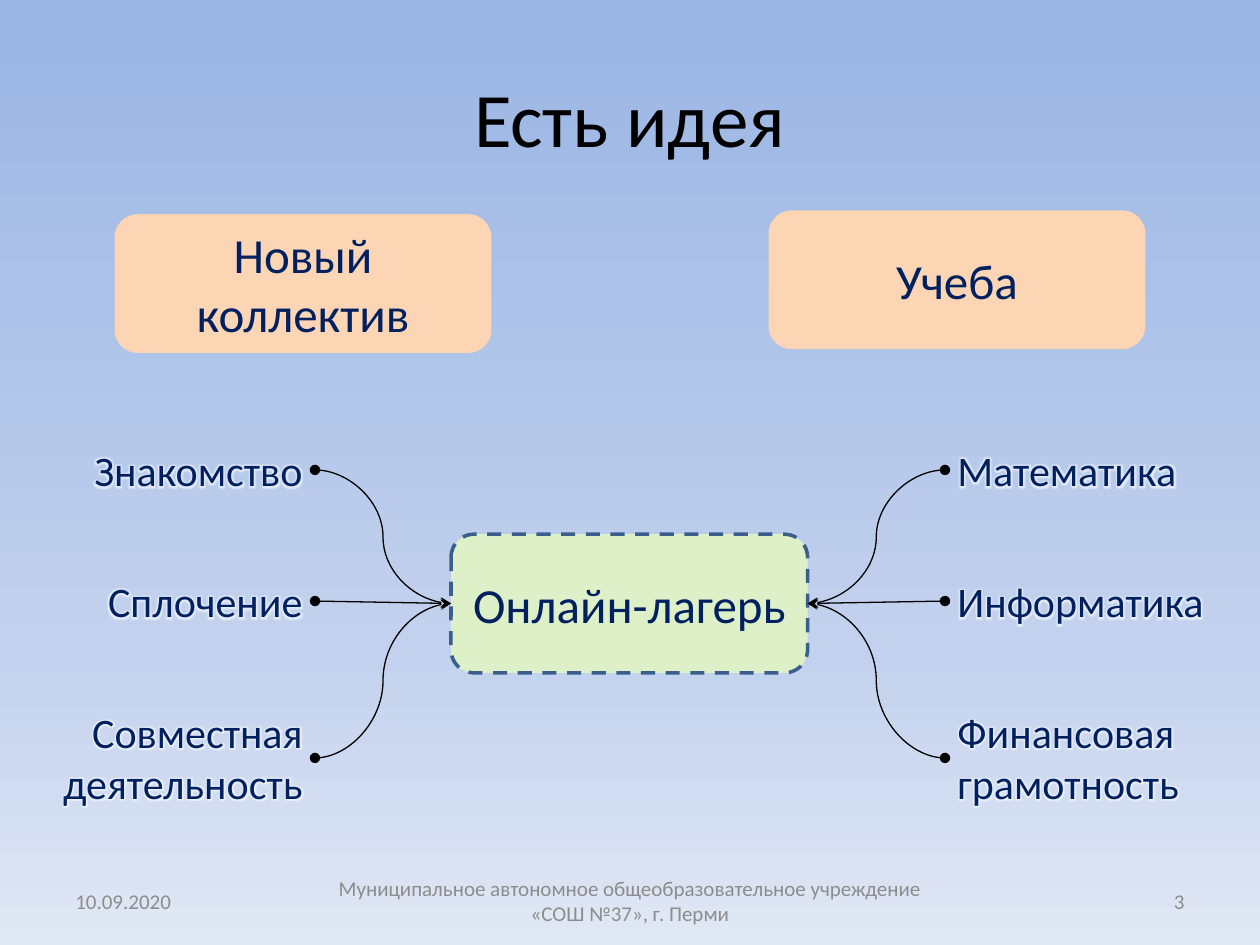
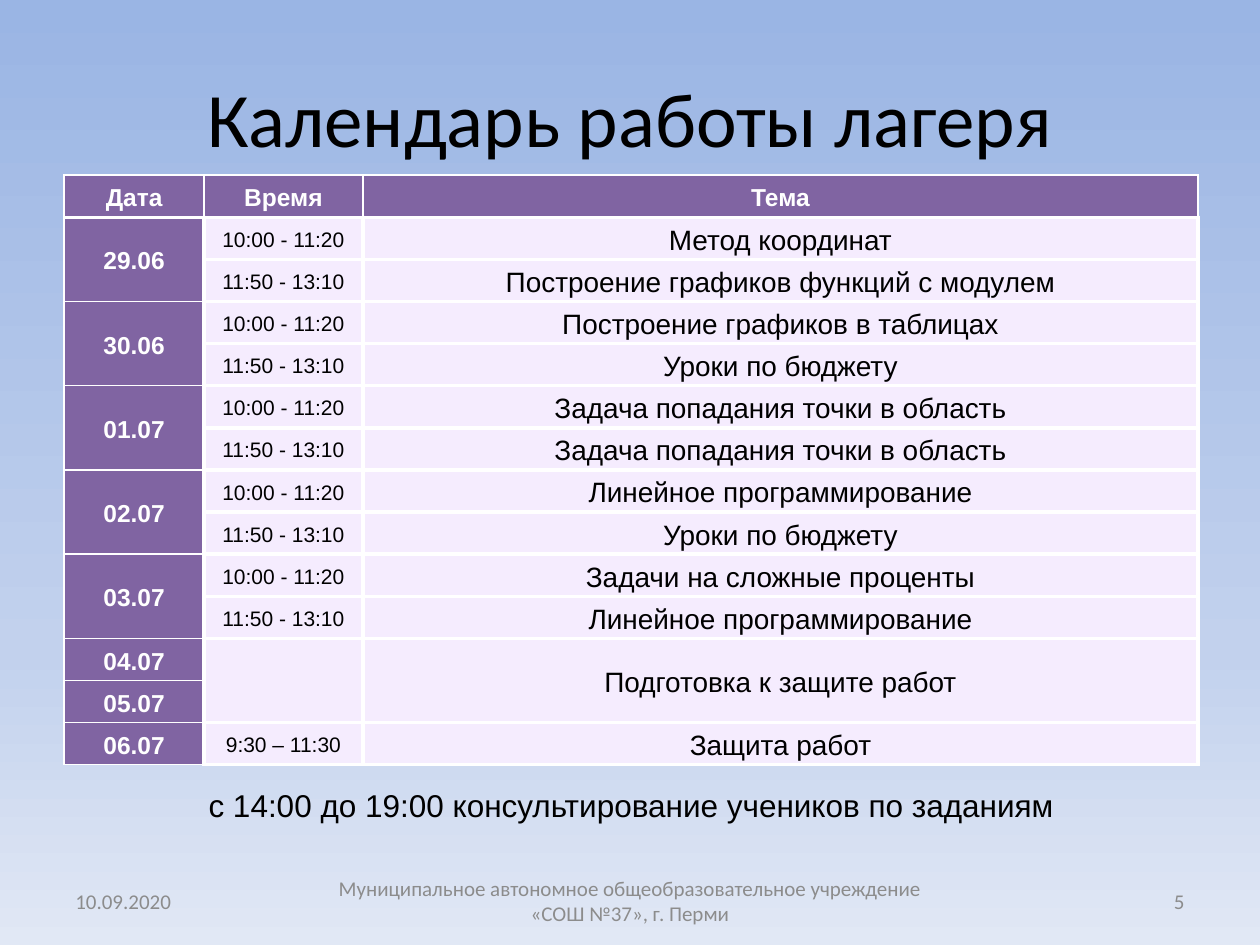
from dataclasses import dataclass
from typing import NamedTuple, Optional

from lxml.etree import SubElement
from pptx import Presentation
from pptx.dml.color import RGBColor
from pptx.enum.dml import MSO_LINE
from pptx.enum.shapes import MSO_CONNECTOR, MSO_SHAPE
from pptx.enum.text import MSO_ANCHOR, MSO_AUTO_SIZE, PP_ALIGN
from pptx.oxml.ns import qn
from pptx.util import Emu, Inches, Pt

SLIDE_WIDTH = Inches(10)
SLIDE_HEIGHT = Inches(7.5)


@dataclass(frozen=True)
class Theme:
    heading_font: str = "Calibri"
    table_font: str = "Arial"
    black: str = "000000"
    white: str = "FFFFFF"
    navy: str = "002060"
    grey: str = "8C8C8C"
    peach: str = "FCD5B5"
    green: str = "DDF0C8"
    dash_blue: str = "3A5F8C"
    purple: str = "8064A2"
    lilac: str = "F5ECFE"
    backdrop: tuple = ((0, "9AB5E4"), (69, "C2D1ED"), (100, "E1E8F5"))
    title_size: int = 44
    box_size: int = 28
    label_size: int = 24
    note_size: int = 18
    topic_size: int = 16
    date_size: int = 14
    small_size: int = 12


THEME = Theme()


class Area(NamedTuple):
    left: float
    top: float
    width: float
    height: float


class TextStyle(NamedTuple):
    size: int
    color: str
    font: str = THEME.heading_font
    align: PP_ALIGN = PP_ALIGN.CENTER
    bold: bool = False
    glow: bool = False


class Label(NamedTuple):
    lines: tuple
    width: float


class Session(NamedTuple):
    date: Optional[str]
    time: Optional[str]
    topic: Optional[str]


TITLE_AREA = Area(5, 4, 90, 16.67)
CAMP_AREA = Area(35.8, 56.53, 28.3, 14.67)
LEFT_EDGE, RIGHT_EDGE = 25, 75
LABEL_TOP, LABEL_STEP = 46.4, 13.87
LABEL_HEIGHTS = {1: 6.67, 2: 12.13}
TABLE_AREA = Area(5.1, 18.53, 90, 62.4)
COLUMN_SHARES = (11.1, 12.6, 66.3)

TEAM_LABELS = (
    Label(("Знакомство",), 18.7),
    Label(("Сплочение",), 17.6),
    Label(("Совместная", "деятельность"), 21.2),
)
STUDY_LABELS = (
    Label(("Математика",), 19.6),
    Label(("Информатика",), 21.8),
    Label(("Финансовая", "грамотность"), 19.8),
)

MORNING, NOON = "10:00 - 11:20", "11:50 - 13:10"
SCHOOL_DAYS = {
    "29.06": ("Метод координат", "Построение графиков функций с модулем"),
    "30.06": ("Построение графиков в таблицах", "Уроки по бюджету"),
    "01.07": ("Задача попадания точки в область",) * 2,
    "02.07": ("Линейное программирование", "Уроки по бюджету"),
    "03.07": ("Задачи на сложные проценты", "Линейное программирование"),
}
CLOSING_DAYS = (
    Session("04.07", "", "Подготовка к защите работ"),
    Session("05.07", None, None),
    Session("06.07", "9:30 – 11:30", "Защита работ"),
)


def across(share: float) -> Emu:
    return Emu(round(SLIDE_WIDTH * share / 100))


def down(share: float) -> Emu:
    return Emu(round(SLIDE_HEIGHT * share / 100))


def place(area: Area) -> tuple:
    return across(area.left), down(area.top), across(area.width), down(area.height)


def add_glow(run) -> None:
    effects = run._r.get_or_add_rPr().makeelement(qn("a:effectLst"), {})
    run._r.rPr.find(qn("a:solidFill")).addnext(effects)
    glow = SubElement(effects, qn("a:glow"), rad=str(Pt(5)))
    color = SubElement(glow, qn("a:srgbClr"), val=THEME.white)
    SubElement(color, qn("a:alpha"), val="60000")


def write(text_frame, lines: tuple, style: TextStyle) -> None:
    for index, line in enumerate(lines):
        paragraph = text_frame.add_paragraph() if index else text_frame.paragraphs[0]
        paragraph.alignment = style.align
        run = paragraph.add_run()
        run.text = line
        run.font.name = style.font
        run.font.size = Pt(style.size)
        run.font.bold = style.bold
        run.font.color.rgb = RGBColor.from_string(style.color)
        if style.glow:
            add_glow(run)


def add_text(slide, area: Area, lines: tuple, style: TextStyle,
             anchor: MSO_ANCHOR = MSO_ANCHOR.MIDDLE, wrap: bool = True):
    text_frame = slide.shapes.add_textbox(*place(area)).text_frame
    text_frame.word_wrap = wrap
    text_frame.vertical_anchor = anchor
    write(text_frame, lines, style)
    return text_frame


def add_box(slide, area: Area, text: str, fill: str):
    shape = slide.shapes.add_shape(MSO_SHAPE.ROUNDED_RECTANGLE, *place(area))
    shape.shadow.inherit = False
    shape.fill.solid()
    shape.fill.fore_color.rgb = RGBColor.from_string(fill)
    shape.line.fill.background()
    shape.text_frame.word_wrap = True
    shape.text_frame.vertical_anchor = MSO_ANCHOR.MIDDLE
    write(shape.text_frame, (text,), TextStyle(THEME.box_size, THEME.navy))
    return shape


def add_link(slide, kind: MSO_CONNECTOR, start: tuple, end: tuple) -> None:
    connector = slide.shapes.add_connector(
        kind, across(start[0]), down(start[1]), across(end[0]), down(end[1]))
    connector.line.color.rgb = RGBColor.from_string(THEME.black)
    connector.line.width = Pt(0.75)
    line = connector.line._get_or_add_ln()
    SubElement(line, qn("a:headEnd"), type="stealth")
    SubElement(line, qn("a:tailEnd"), type="oval")
    SubElement(connector._element.spPr, qn("a:effectLst"))


def add_branch(slide, labels: tuple, edge: float, hub: tuple, align: PP_ALIGN) -> None:
    style = TextStyle(THEME.label_size, THEME.navy, align=align, glow=True)
    for row, label in enumerate(labels):
        top = LABEL_TOP + LABEL_STEP * row
        height = LABEL_HEIGHTS[len(label.lines)]
        left = edge - label.width if align == PP_ALIGN.RIGHT else edge
        text_frame = add_text(slide, Area(left, top, label.width, height), label.lines,
                              style, MSO_ANCHOR.TOP, wrap=False)
        text_frame.auto_size = MSO_AUTO_SIZE.SHAPE_TO_FIT_TEXT
        kind = MSO_CONNECTOR.STRAIGHT if row == 1 else MSO_CONNECTOR.CURVE
        add_link(slide, kind, hub, (edge, top + height / 2))


def set_borders(cell, widths: dict) -> None:
    properties = cell._tc.get_or_add_tcPr()
    for index, (side, width) in enumerate(widths.items()):
        line = properties.makeelement(qn(f"a:ln{side}"), {"w": str(Pt(width))})
        fill = SubElement(line, qn("a:solidFill"))
        SubElement(fill, qn("a:srgbClr"), val=THEME.white)
        properties.insert(index, line)


def format_cell(cell, text: Optional[str], row: int, column: int) -> None:
    is_heading = row == 0 or column == 0
    cell.fill.solid()
    cell.fill.fore_color.rgb = RGBColor.from_string(THEME.purple if is_heading else THEME.lilac)
    cell.vertical_anchor = MSO_ANCHOR.MIDDLE
    cell.margin_left = cell.margin_right = Inches(0.07)
    cell.margin_top = cell.margin_bottom = 0
    thin, thick = 1, 2.25
    set_borders(cell, {
        "L": thin if is_heading else thick,
        "R": thin if row == 0 else thick,
        "T": thin if row == 0 or (column == 0 and row > 1) else thick,
        "B": thin if column == 0 and row > 0 else thick,
    })
    if text:
        if is_heading:
            style = TextStyle(THEME.date_size, THEME.white, THEME.table_font, bold=True)
        else:
            size = THEME.small_size if column == 1 else THEME.topic_size
            style = TextStyle(size, THEME.black, THEME.table_font)
        write(cell.text_frame, (text,), style)
        cell.text_frame.paragraphs[0].line_spacing = 1.15


def add_calendar(slide) -> None:
    rows = [Session("Дата", "Время", "Тема")]
    for date, (morning_topic, noon_topic) in SCHOOL_DAYS.items():
        rows += [Session(date, MORNING, morning_topic), Session(None, NOON, noon_topic)]
    rows += CLOSING_DAYS
    table = slide.shapes.add_table(len(rows), len(COLUMN_SHARES), *place(TABLE_AREA)).table
    table.horz_banding = False
    for column, share in zip(table.columns, COLUMN_SHARES):
        column.width = across(share)
    for table_row in table.rows:
        table_row.height = down(TABLE_AREA.height / len(rows))
    for row, session in enumerate(rows):
        for column, text in enumerate(session):
            format_cell(table.cell(row, column), text, row, column)
            if text is None:
                table.cell(row - 1, column).merge(table.cell(row, column))


def paint_backdrop(presentation) -> None:
    master = presentation.slide_master
    fill = master.background.fill
    fill.gradient()
    fill.gradient_angle = 270
    stops = next(master._element.iter(qn("a:gsLst")))
    for stop in list(stops):
        stops.remove(stop)
    for position, color in THEME.backdrop:
        stop = SubElement(stops, qn("a:gs"), pos=str(position * 1000))
        SubElement(stop, qn("a:srgbClr"), val=color)


def add_slide(presentation, title: str, number: int):
    slide = presentation.slides.add_slide(presentation.slide_layouts[5])
    heading = slide.shapes.title
    heading.left, heading.top, heading.width, heading.height = place(TITLE_AREA)
    heading.text_frame.vertical_anchor = MSO_ANCHOR.MIDDLE
    write(heading.text_frame, (title,), TextStyle(THEME.title_size, THEME.black))
    footers = (
        (5, 23.3, "10.09.2020", PP_ALIGN.LEFT),
        (25.6, 48.8, "Муниципальное автономное общеобразовательное учреждение "
                     "«СОШ №37», г. Перми", PP_ALIGN.CENTER),
        (71.7, 23.3, str(number), PP_ALIGN.RIGHT),
    )
    for left, width, text, align in footers:
        add_text(slide, Area(left, 92.67, width, 5.33), (text,),
                 TextStyle(THEME.small_size, THEME.grey, align=align))
    return slide


def build_idea_slide(presentation) -> None:
    slide = add_slide(presentation, "Есть идея", 3)
    add_box(slide, Area(9.1, 22.67, 29.9, 14.67), "Новый коллектив", THEME.peach)
    add_box(slide, Area(61, 22.27, 29.9, 14.67), "Учеба", THEME.peach)
    camp = add_box(slide, CAMP_AREA, "Онлайн-лагерь", THEME.green)
    camp.line.color.rgb = RGBColor.from_string(THEME.dash_blue)
    camp.line.width = Pt(2)
    camp.line.dash_style = MSO_LINE.DASH
    middle = CAMP_AREA.top + CAMP_AREA.height / 2
    add_branch(slide, TEAM_LABELS, LEFT_EDGE, (CAMP_AREA.left, middle), PP_ALIGN.RIGHT)
    add_branch(slide, STUDY_LABELS, RIGHT_EDGE,
               (CAMP_AREA.left + CAMP_AREA.width, middle), PP_ALIGN.LEFT)


def build_calendar_slide(presentation) -> None:
    slide = add_slide(presentation, "Календарь работы лагеря", 5)
    add_calendar(slide)
    add_text(slide, Area(5.2, 82.53, 89.8, 5.33),
             ("с 14:00 до 19:00 консультирование учеников по заданиям",),
             TextStyle(THEME.note_size, THEME.black, THEME.table_font), MSO_ANCHOR.TOP)


def main() -> None:
    presentation = Presentation()
    presentation.slide_width = SLIDE_WIDTH
    presentation.slide_height = SLIDE_HEIGHT
    paint_backdrop(presentation)
    build_idea_slide(presentation)
    build_calendar_slide(presentation)
    presentation.save("out.pptx")


if __name__ == "__main__":
    main()
